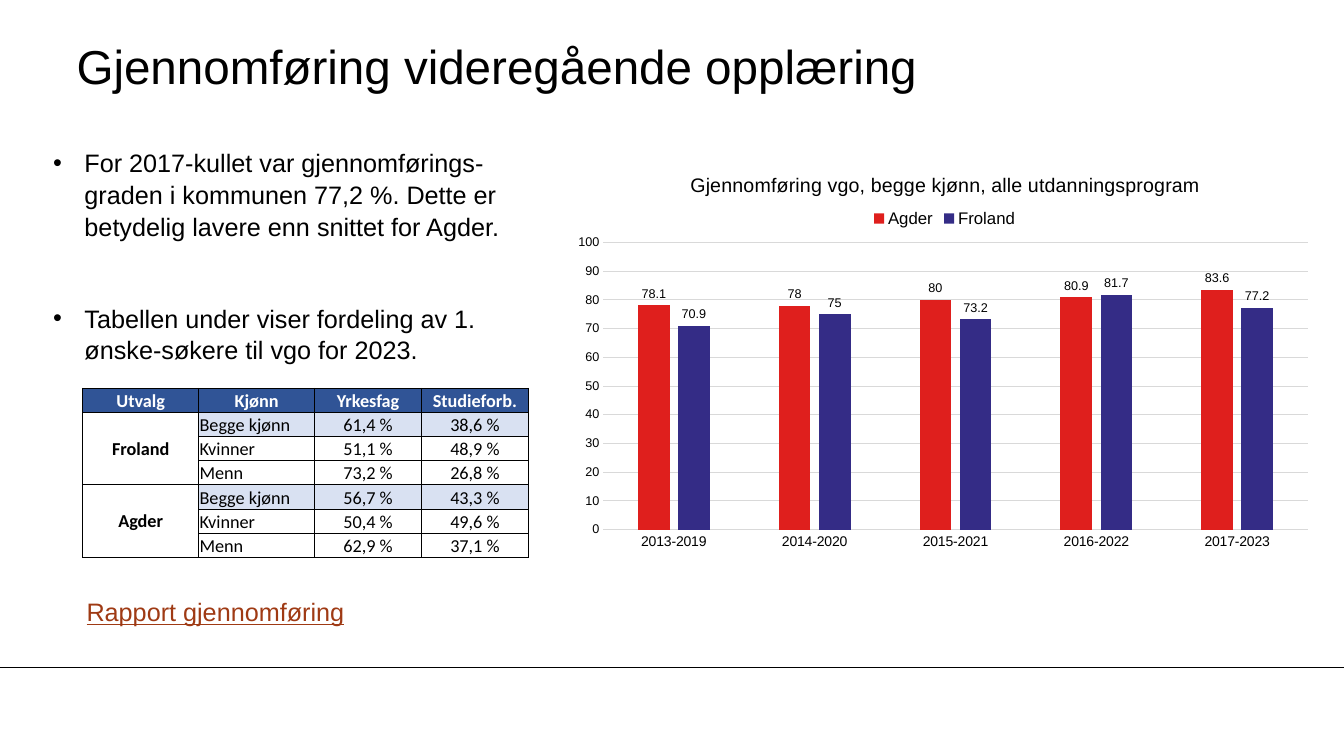
from lxml import etree
from pptx import Presentation
from pptx.chart.data import CategoryChartData
from pptx.dml.color import RGBColor
from pptx.enum import chart as charts, shapes, text
from pptx.oxml import parse_xml
from pptx.oxml.ns import nsdecls, qn
from pptx.util import Inches, Pt

BLACK = RGBColor(0, 0, 0)
WHITE = RGBColor(255, 255, 255)
HEADER_BLUE = RGBColor(0x30, 0x54, 0x96)
LIGHT_BLUE = RGBColor(0xD9, 0xE1, 0xF2)
LINK_BROWN = RGBColor(0x9F, 0x3A, 0x14)
GRID_GREY = RGBColor(0xD9, 0xD9, 0xD9)
AGDER_RED = RGBColor(0xDF, 0x1F, 0x1D)
FROLAND_BLUE = RGBColor(0x34, 0x2C, 0x86)


def set_font(font, size, color=BLACK, name="Arial", bold=False):
    font.size, font.name, font.bold = Pt(size), name, bold
    font.color.rgb = color


def place_chart_part(element, index, **fractions):
    """Place a chart part by fractions of the chart area; index is the layout's child position."""
    for old_layout in element.findall(qn("c:layout")):
        element.remove(old_layout)
    layout = etree.Element(qn("c:layout"))
    manual = etree.SubElement(layout, qn("c:manualLayout"))
    if "w" in fractions:
        etree.SubElement(manual, qn("c:layoutTarget")).set("val", "inner")
    for mode in ("xMode", "yMode"):
        etree.SubElement(manual, qn(f"c:{mode}")).set("val", "edge")
    for key, fraction in fractions.items():
        etree.SubElement(manual, qn(f"c:{key}")).set("val", str(fraction))
    element.insert(index, layout)


presentation = Presentation()
presentation.slide_width, presentation.slide_height = Inches(13.33), Inches(7.5)
slide = presentation.slides.add_slide(presentation.slide_layouts[6])

# Footer line
footer_line = slide.shapes.add_connector(
    shapes.MSO_CONNECTOR.STRAIGHT, 0, Inches(6.62), Inches(13.33), Inches(6.62))
footer_line.line.color.rgb = BLACK
footer_line.line.width = Pt(0.75)
etree.SubElement(footer_line._element.spPr, qn("a:effectLst"))

# Title
title_box = slide.shapes.add_textbox(Inches(0.76), Inches(0.27), Inches(11.1), Inches(0.75))
title_frame = title_box.text_frame
title_frame.word_wrap = True
title_frame.vertical_anchor = text.MSO_ANCHOR.MIDDLE
title_frame.margin_left = title_frame.margin_right = 0
title_frame.margin_top = title_frame.margin_bottom = 0
title_frame.text = "Gjennomføring videregående opplæring"
set_font(title_frame.paragraphs[0].font, 34)

# Bullets
bullet_box = slide.shapes.add_textbox(Inches(0.43), Inches(1.4), Inches(5.17), Inches(2.22))
bullet_frame = bullet_box.text_frame
bullet_frame.word_wrap = True
bullet_frame.text = (
    "For 2017-kullet var gjennomførings-graden i kommunen 77,2 %. "
    "Dette er betydelig lavere enn snittet for Agder.\n"
    "Tabellen under viser fordeling av 1. ønske-søkere til vgo for 2023.")
for paragraph in bullet_frame.paragraphs:
    properties = paragraph._p.get_or_add_pPr()
    properties.set("marL", str(Inches(0.31)))
    properties.set("indent", str(-Inches(0.31)))
    etree.SubElement(properties, qn("a:buFont")).set("typeface", "Arial")
    etree.SubElement(properties, qn("a:buChar")).set("char", "•")
    paragraph.line_spacing = 1.05
    set_font(paragraph.font, 18)
bullet_frame.paragraphs[1].space_before = Pt(43)

# Table
rows = [
    ("Utvalg", "Kjønn", "Yrkesfag", "Studieforb."),
    ("Froland", "Begge kjønn", "61,4 %", "38,6 %"),
    ("", "Kvinner", "51,1 %", "48,9 %"),
    ("", "Menn", "73,2 %", "26,8 %"),
    ("Agder", "Begge kjønn", "56,7 %", "43,3 %"),
    ("", "Kvinner", "50,4 %", "49,6 %"),
    ("", "Menn", "62,9 %", "37,1 %"),
]
table = slide.shapes.add_table(
    len(rows), 4, Inches(0.82), Inches(3.85), Inches(4.42), Inches(1.69)).table
for column, width in zip(table.columns, (1.15, 1.15, 1.06, 1.06)):
    column.width = Inches(width)
for row_index, row in enumerate(rows):
    table.rows[row_index].height = Inches(0.24)
    for column_index, value in enumerate(row):
        cell = table.cell(row_index, column_index)
        is_header, is_area = row_index == 0, column_index == 0
        cell.margin_left = cell.margin_right = cell.margin_top = Inches(0.01)
        cell.margin_bottom = 0
        cell.vertical_anchor = (text.MSO_ANCHOR.MIDDLE if is_area and not is_header
                                else text.MSO_ANCHOR.BOTTOM)
        for side in "LRTB":
            cell._tc.get_or_add_tcPr().append(parse_xml(
                f'<a:ln{side} {nsdecls("a")} w="{Pt(0.5)}"><a:solidFill>'
                f'<a:srgbClr val="{BLACK}"/></a:solidFill></a:ln{side}>'))
        cell.fill.solid()
        if is_header:
            cell.fill.fore_color.rgb = HEADER_BLUE
        elif row[1] == "Begge kjønn" and not is_area:
            cell.fill.fore_color.rgb = LIGHT_BLUE
        else:
            cell.fill.fore_color.rgb = WHITE
        cell.text = value
        paragraph = cell.text_frame.paragraphs[0]
        paragraph.alignment = (text.PP_ALIGN.LEFT if column_index == 1 and not is_header
                               else text.PP_ALIGN.CENTER)
        set_font(paragraph.font, 13, WHITE if is_header else BLACK, "Calibri",
                 is_header or is_area)
for first_row in (1, 4):
    table.cell(first_row, 0).merge(table.cell(first_row + 2, 0))

# Report label
report_box = slide.shapes.add_textbox(Inches(0.76), Inches(5.87), Inches(2.81), Inches(0.4))
report_box.text_frame.word_wrap = True
report_box.text_frame.text = "Rapport gjennomføring"
report_font = report_box.text_frame.paragraphs[0].font
set_font(report_font, 18, LINK_BROWN)
report_font.underline = True

# Chart
chart_data = CategoryChartData()
chart_data.categories = ["2013-2019", "2014-2020", "2015-2021", "2016-2022", "2017-2023"]
chart_data.add_series("Agder", (78.1, 78, 80, 80.9, 83.6))
chart_data.add_series("Froland", (70.9, 75, 73.2, 81.7, 77.2))
chart = slide.shapes.add_chart(
    charts.XL_CHART_TYPE.COLUMN_CLUSTERED,
    Inches(5.61), Inches(1.47), Inches(7.51), Inches(4.07), chart_data).chart
set_font(chart.font, 10)

chart.has_title = True
chart_title = chart.chart_title
chart_title.include_in_layout = False
chart_title.text_frame.text = "Gjennomføring vgo, begge kjønn, alle utdanningsprogram"
set_font(chart_title.text_frame.paragraphs[0].font, 14)

chart.has_legend = True
chart.legend.position = charts.XL_LEGEND_POSITION.TOP
chart.legend.include_in_layout = False
set_font(chart.legend.font, 12)

plot = chart.plots[0]
plot.gap_width, plot.overlap, plot.vary_by_categories = 219, -27, False
for series, color in zip(plot.series, (AGDER_RED, FROLAND_BLUE)):
    series.format.fill.solid()
    series.format.fill.fore_color.rgb = color
    labels = series.data_labels
    labels.show_value = True
    labels.position = charts.XL_LABEL_POSITION.OUTSIDE_END
    set_font(labels.font, 9)

for axis, size in ((chart.category_axis, 10), (chart.value_axis, 9)):
    axis.major_tick_mark = axis.minor_tick_mark = charts.XL_TICK_MARK.NONE
    set_font(axis.tick_labels.font, size)
value_axis = chart.value_axis
value_axis.minimum_scale, value_axis.maximum_scale, value_axis.major_unit = 0, 100, 10
value_axis.tick_labels.number_format = "#,##0"
value_axis.tick_labels.number_format_is_linked = False
value_axis.format.line.fill.background()
for line in (chart.category_axis.format.line, value_axis.major_gridlines.format.line):
    line.color.rgb = GRID_GREY
    line.width = Pt(0.75)

place_chart_part(chart_title._element, 1, x=0.16, y=0.05)
place_chart_part(chart.legend._element, 1, x=0.4, y=0.14)
place_chart_part(chart._chartSpace.chart.plotArea, 0, x=0.05, y=0.23, w=0.93, h=0.7)

presentation.save("out.pptx")
